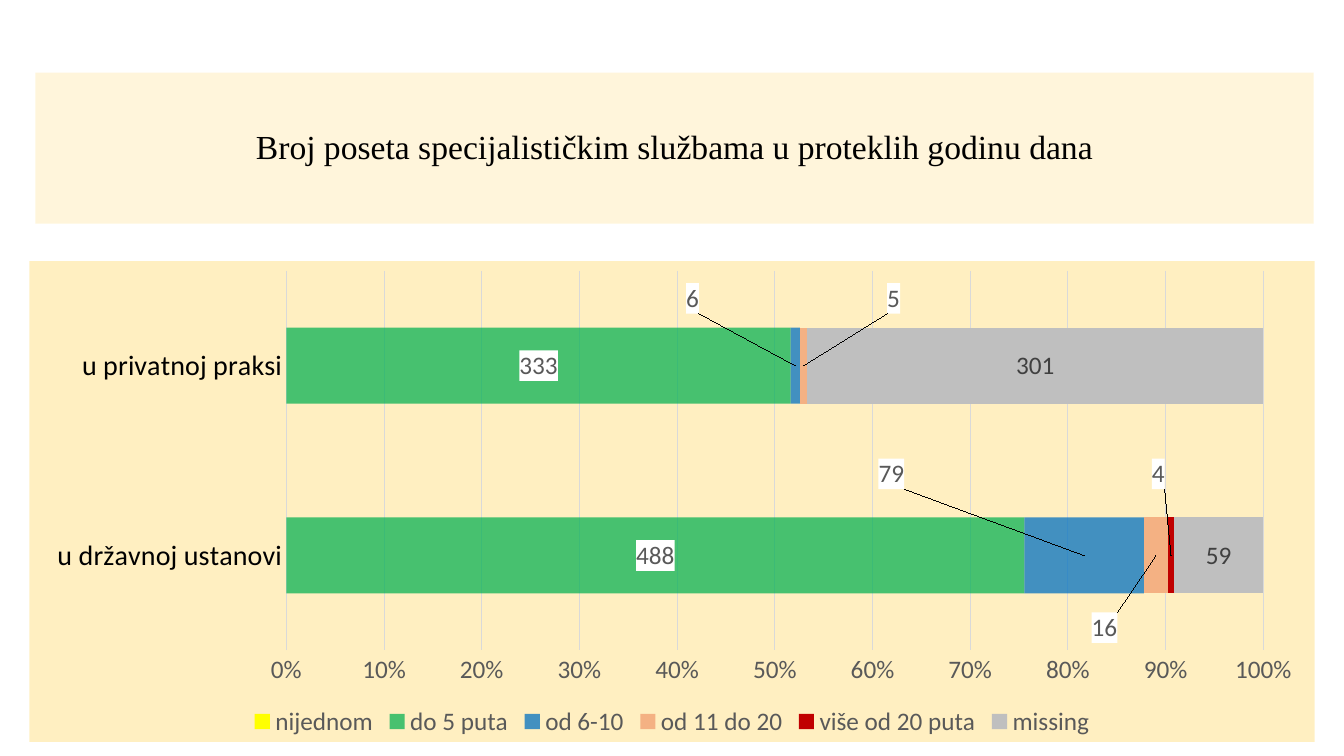
from dataclasses import dataclass, field

from pptx import Presentation
from pptx.chart.data import CategoryChartData
from pptx.dml.color import RGBColor
from pptx.dml.fill import FillFormat
from pptx.enum.chart import XL_CHART_TYPE, XL_LEGEND_POSITION, XL_TICK_MARK
from pptx.enum.text import MSO_ANCHOR, PP_ALIGN
from pptx.oxml.xmlchemy import OxmlElement
from pptx.util import Inches, Pt

STACKED = XL_CHART_TYPE.BAR_STACKED_100
BOTTOM = XL_LEGEND_POSITION.BOTTOM
NO_TICK = XL_TICK_MARK.NONE
MIDDLE = MSO_ANCHOR.MIDDLE
CENTER = PP_ALIGN.CENTER


@dataclass(frozen=True)
class Fill:
    color: str
    opacity: int = 100


@dataclass(frozen=True)
class Theme:
    title_font: str = "Times New Roman"
    chart_font: str = "Calibri"
    title_size: int = 24
    category_size: int = 20
    chart_size: int = 18
    text: str = "000000"
    muted: str = "595959"
    dark: str = "404040"
    grid: str = "D9D9D9"
    title_fill: Fill = Fill("FFF2CC", 70)
    chart_fill: Fill = Fill("FFD966", 40)
    label_fill: Fill = Fill("FFFFFF")


THEME = Theme()


@dataclass(frozen=True)
class Visits:
    """One answer; label_shifts maps a category index to a label offset (chart fractions)."""
    name: str
    values: tuple
    fill: Fill
    label_color: str = THEME.muted
    boxed: bool = True
    label_shifts: dict = field(default_factory=dict)


CATEGORIES = ("u državnoj ustanovi", "u privatnoj praksi")
ANSWERS = (
    Visits("nijednom", (None, None), Fill("FFFF00")),
    Visits("do 5 puta", (488, 333), Fill("00B050", 72)),
    Visits("od 6-10", (79, 6), Fill("0070C0", 74),
           label_shifts={0: (-0.15, -0.17), 1: (-0.08, -0.14)}),
    Visits("od 11 do 20", (16, 5), Fill("F4B183"),
           label_shifts={0: (-0.04, 0.15), 1: (0.07, -0.14)}),
    Visits("više od 20 puta", (4, None), Fill("C00000"),
           label_shifts={0: (-0.01, -0.17)}),
    Visits("missing", (59, 301), Fill("BFBFBF"), THEME.dark, boxed=False),
)


def paint(sp_pr, fill: Fill) -> None:
    """Give a shape-properties element a solid, possibly translucent fill."""
    ff = FillFormat.from_fill_parent(sp_pr)
    ff.solid()
    ff.fore_color.rgb = RGBColor.from_string(fill.color)
    if fill.opacity < 100:
        alpha = OxmlElement("a:alpha")
        alpha.set("val", str(fill.opacity * 1000))
        sp_pr.xpath("a:solidFill/a:srgbClr")[0].append(alpha)


def filled_properties(fill: Fill):
    sp_pr = OxmlElement("c:spPr")
    paint(sp_pr, fill)
    return sp_pr


def manual_layout(tag_values: dict):
    layout = OxmlElement("c:layout")
    manual = OxmlElement("c:manualLayout")
    layout.append(manual)
    for tag, value in tag_values.items():
        item = OxmlElement(f"c:{tag}")
        item.set("val", str(value))
        manual.append(item)
    return layout


def set_font(font, name: str, size: int, color: str) -> None:
    font.name = name
    font.size = Pt(size)
    font.color.rgb = RGBColor.from_string(color)


def set_line(line, color: str) -> None:
    line.color.rgb = RGBColor.from_string(color)
    line.width = Pt(0.75)


def add_title(slide, text: str) -> None:
    title = slide.shapes.title
    title.left, title.top = Inches(0.35), Inches(0.72)
    title.width, title.height = Inches(12.68), Inches(1.5)
    paint(title.element.spPr, THEME.title_fill)
    tf = title.text_frame
    tf.vertical_anchor = MIDDLE
    p = tf.paragraphs[0]
    p.alignment = CENTER
    p.line_spacing = 0.9
    r = p.add_run()
    r.text = text
    set_font(r.font, THEME.title_font, THEME.title_size, THEME.text)


def add_labels(series, answer: Visits) -> None:
    labels = series.data_labels
    labels.show_value = True
    set_font(labels.font, THEME.chart_font, THEME.chart_size, answer.label_color)
    for index, (dx, dy) in answer.label_shifts.items():
        set_font(series.points[index].data_label.font,
                 THEME.chart_font, THEME.chart_size, answer.label_color)
        dlbl = series._element.xpath(f"c:dLbls/c:dLbl[c:idx/@val='{index}']")[0]
        dlbl.xpath("c:txPr")[0].addprevious(manual_layout({"x": dx, "y": dy}))
    if answer.boxed:
        for tx_pr in series._element.xpath("c:dLbls//c:txPr"):
            tx_pr.addprevious(filled_properties(THEME.label_fill))


def style_axes(chart) -> None:
    cat, val = chart.category_axis, chart.value_axis
    for axis in (cat, val):
        axis.major_tick_mark = axis.minor_tick_mark = NO_TICK
    set_font(cat.tick_labels.font, THEME.chart_font, THEME.category_size, THEME.text)
    set_line(cat.format.line, THEME.grid)
    set_font(val.tick_labels.font, THEME.chart_font, THEME.chart_size, THEME.muted)
    val.tick_labels.number_format = "0%"
    val.tick_labels.number_format_is_linked = False
    val.format.line.fill.background()
    val.has_major_gridlines = True
    set_line(val.major_gridlines.format.line, THEME.grid)


def add_visits_chart(slide) -> None:
    data = CategoryChartData()
    data.categories = CATEGORIES
    for answer in ANSWERS:
        data.add_series(answer.name, answer.values)
    chart = slide.shapes.add_chart(STACKED, Inches(0.29), Inches(2.59),
                                   Inches(12.75), Inches(4.77), data).chart
    chart.has_title = False
    set_font(chart.font, THEME.chart_font, THEME.chart_size, THEME.text)
    chart.has_legend = True
    chart.legend.position = BOTTOM
    chart.legend.include_in_layout = False
    set_font(chart.legend.font, THEME.chart_font, THEME.chart_size, THEME.muted)
    style_axes(chart)

    plot = chart.plots[0]
    plot.gap_width, plot.overlap = 150, 100
    for series, answer in zip(plot.series, ANSWERS):
        paint(series._element.get_or_add_spPr(), answer.fill)
        add_labels(series, answer)

    space = chart._chartSpace
    space.xpath("c:chart")[0].addnext(filled_properties(THEME.chart_fill))
    plot_area = space.xpath("c:chart/c:plotArea")[0]
    for layout in plot_area.xpath("c:layout"):
        plot_area.remove(layout)
    plot_area.insert(0, manual_layout({
        "layoutTarget": "inner", "xMode": "edge", "yMode": "edge",
        "x": 0.2, "y": 0.02, "w": 0.76, "h": 0.79}))


def main() -> None:
    prs = Presentation()
    prs.slide_width, prs.slide_height = Inches(13.33), Inches(7.5)
    slide = prs.slides.add_slide(prs.slide_layouts.get_by_name("Title Only"))
    add_title(slide, "Broj poseta specijalističkim službama u proteklih godinu dana")
    add_visits_chart(slide)
    prs.save("out.pptx")


if __name__ == "__main__":
    main()
